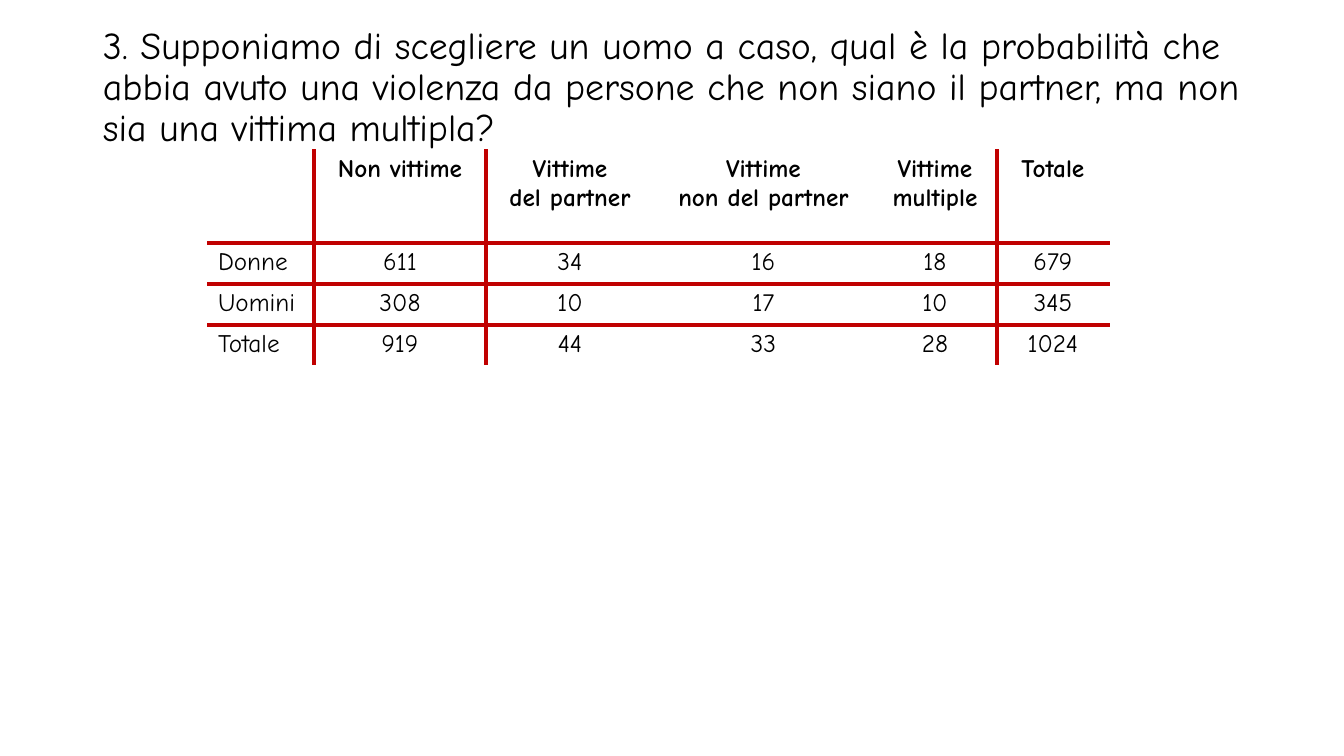
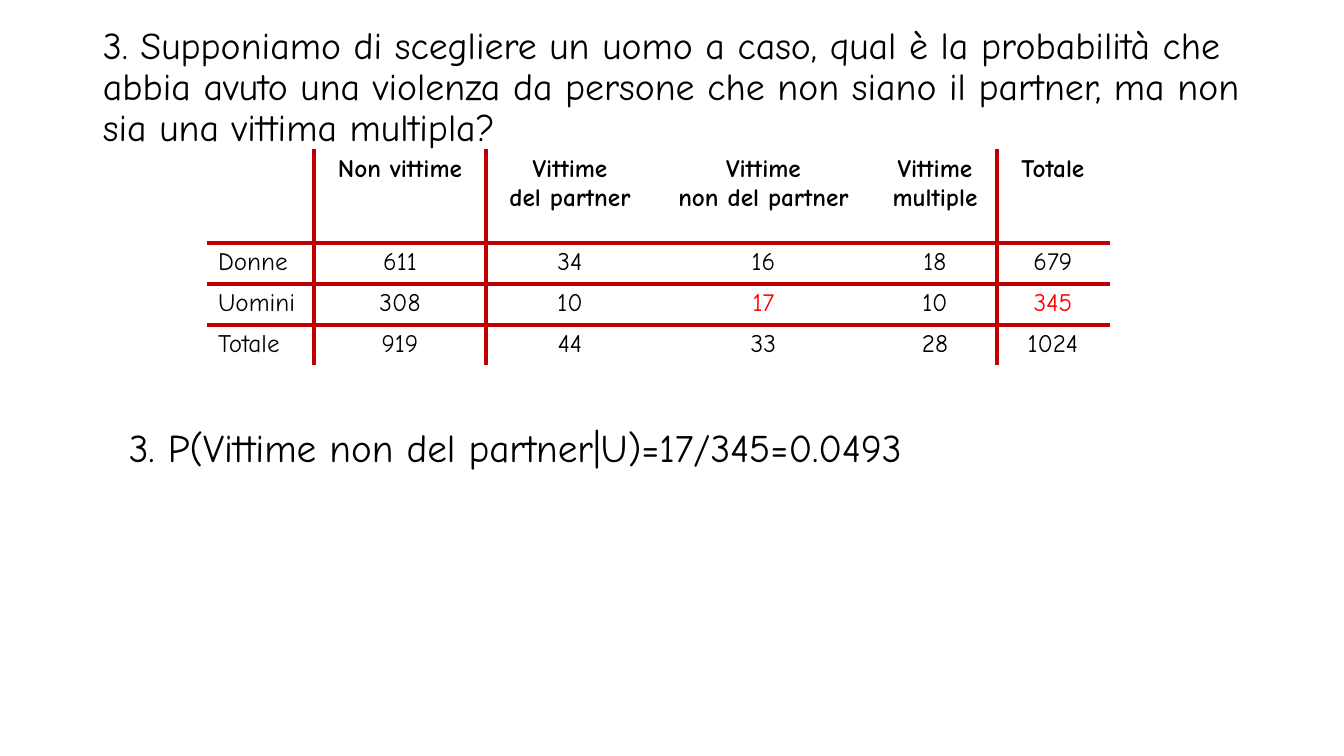
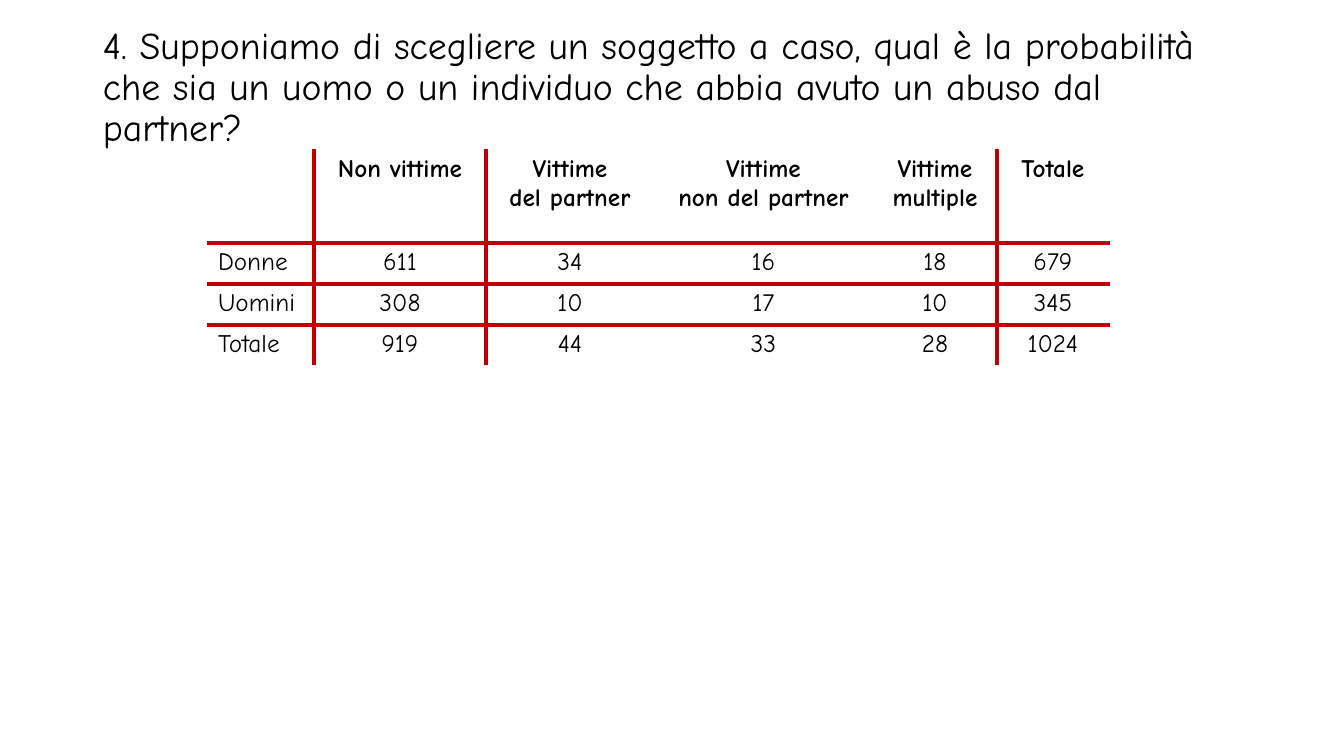
from itertools import accumulate

from lxml import etree
from pptx import Presentation
from pptx.dml.color import RGBColor
from pptx.enum.text import MSO_ANCHOR, PP_ALIGN
from pptx.oxml.ns import qn
from pptx.util import Emu, Pt

CENTER, LEFT = PP_ALIGN.CENTER, PP_ALIGN.LEFT
TOP, MIDDLE = MSO_ANCHOR.TOP, MSO_ANCHOR.MIDDLE

BLACK = RGBColor(0x00, 0x00, 0x00)
WHITE = RGBColor(0xFF, 0xFF, 0xFF)
RULE_RED = RGBColor(0xC0, 0x00, 0x00)
HIGHLIGHT_RED = RGBColor(0xFF, 0x00, 0x00)
FONT = "Comic Neue"

PARTNER_QUESTION = (
    "3. Supponiamo di scegliere un uomo a caso, qual è la probabilità che "
    "abbia avuto una violenza da persone che non siano il partner, ma non "
    "sia una vittima multipla?"
)
UNION_QUESTION = (
    "4. Supponiamo di scegliere un soggetto a caso, qual è la probabilità "
    "che sia un uomo o un individuo che abbia avuto un abuso dal partner?"
)
SLIDES = [
    {"question": PARTNER_QUESTION},
    {
        "question": PARTNER_QUESTION,
        "highlights": {(2, 3), (2, 5)},
        "answer": "3. P(Vittime non del partner|U)=17/345=0.0493",
    },
    {"question": UNION_QUESTION},
]
VICTIM_COUNTS = [
    ("", "Non vittime", "Vittime\ndel partner", "Vittime\nnon del partner",
     "Vittime\nmultiple", "Totale"),
    ("Donne", "611", "34", "16", "18", "679"),
    ("Uomini", "308", "10", "17", "10", "345"),
    ("Totale", "919", "44", "33", "28", "1024"),
]

SLIDE_SIZE = (1344, 756)
QUESTION_BOX = (93, 15, 1159, 146)
ANSWER_BOX = (119, 418, 1143, 57)
TABLE_ORIGIN = (208, 150)
COLUMN_WIDTHS = (106, 172, 168, 219, 124, 112)
ROW_HEIGHTS = (93, 41, 41, 41)
RULED_COLUMN_EDGES = {1, 2, 5}
RULED_ROW_EDGES = {1, 2, 3}


def px(length):
    return Emu(round(length * 914400 / 100.8))


def add_run(paragraph, text, size, color=BLACK, bold=False):
    run = paragraph.add_run()
    run.text = text
    run.font.name = FONT
    run.font.size = Pt(size)
    run.font.bold = bold
    run.font.color.rgb = color


def add_text(slide, box, text, size, anchor=TOP, line_spacing=1.0):
    frame = slide.shapes.add_textbox(*map(px, box)).text_frame
    frame.word_wrap = True
    frame.vertical_anchor = anchor
    paragraph = frame.paragraphs[0]
    paragraph.line_spacing = line_spacing
    add_run(paragraph, text, size)


def add_border(cell, tag, ruled):
    color, width = (RULE_RED, 3) if ruled else (WHITE, 1)
    border = etree.SubElement(cell._tc.get_or_add_tcPr(), qn(tag), w=str(Pt(width)))
    fill = etree.SubElement(border, qn("a:solidFill"))
    etree.SubElement(fill, qn("a:srgbClr"), val=str(color))


def fill_cell(cell, row, column, text, highlighted):
    edges = (
        ("a:lnL", column in RULED_COLUMN_EDGES),
        ("a:lnR", column + 1 in RULED_COLUMN_EDGES),
        ("a:lnT", row in RULED_ROW_EDGES),
        ("a:lnB", row + 1 in RULED_ROW_EDGES),
    )
    for tag, ruled in edges:
        add_border(cell, tag, ruled)
    cell.fill.background()
    if not text:
        return
    frame = cell.text_frame
    for index, line in enumerate(text.split("\n")):
        paragraph = frame.add_paragraph() if index else frame.paragraphs[0]
        paragraph.alignment = CENTER if column else LEFT
        add_run(paragraph, line, 18, HIGHLIGHT_RED if highlighted else BLACK, row == 0)


def add_victim_table(slide, highlights):
    size = (sum(COLUMN_WIDTHS), sum(ROW_HEIGHTS))
    table = slide.shapes.add_table(
        len(ROW_HEIGHTS), len(COLUMN_WIDTHS), *map(px, TABLE_ORIGIN + size)
    ).table
    table.first_row = table.horz_banding = False
    for column, width in zip(table.columns, COLUMN_WIDTHS):
        column.width = px(width)
    for row, height in zip(table.rows, ROW_HEIGHTS):
        row.height = px(height)
    for r, counts in enumerate(VICTIM_COUNTS):
        for c, text in enumerate(counts):
            fill_cell(table.cell(r, c), r, c, text, (r, c) in highlights)


def main():
    deck = Presentation()
    deck.slide_width, deck.slide_height = map(px, SLIDE_SIZE)
    blank = deck.slide_layouts[6]
    for content in SLIDES:
        slide = deck.slides.add_slide(blank)
        add_victim_table(slide, content.get("highlights", ()))
        if "answer" in content:
            add_text(slide, ANSWER_BOX, content["answer"], 28)
        add_text(slide, QUESTION_BOX, content["question"], 27, MIDDLE, 0.9)
    deck.save("out.pptx")


if __name__ == "__main__":
    main()
